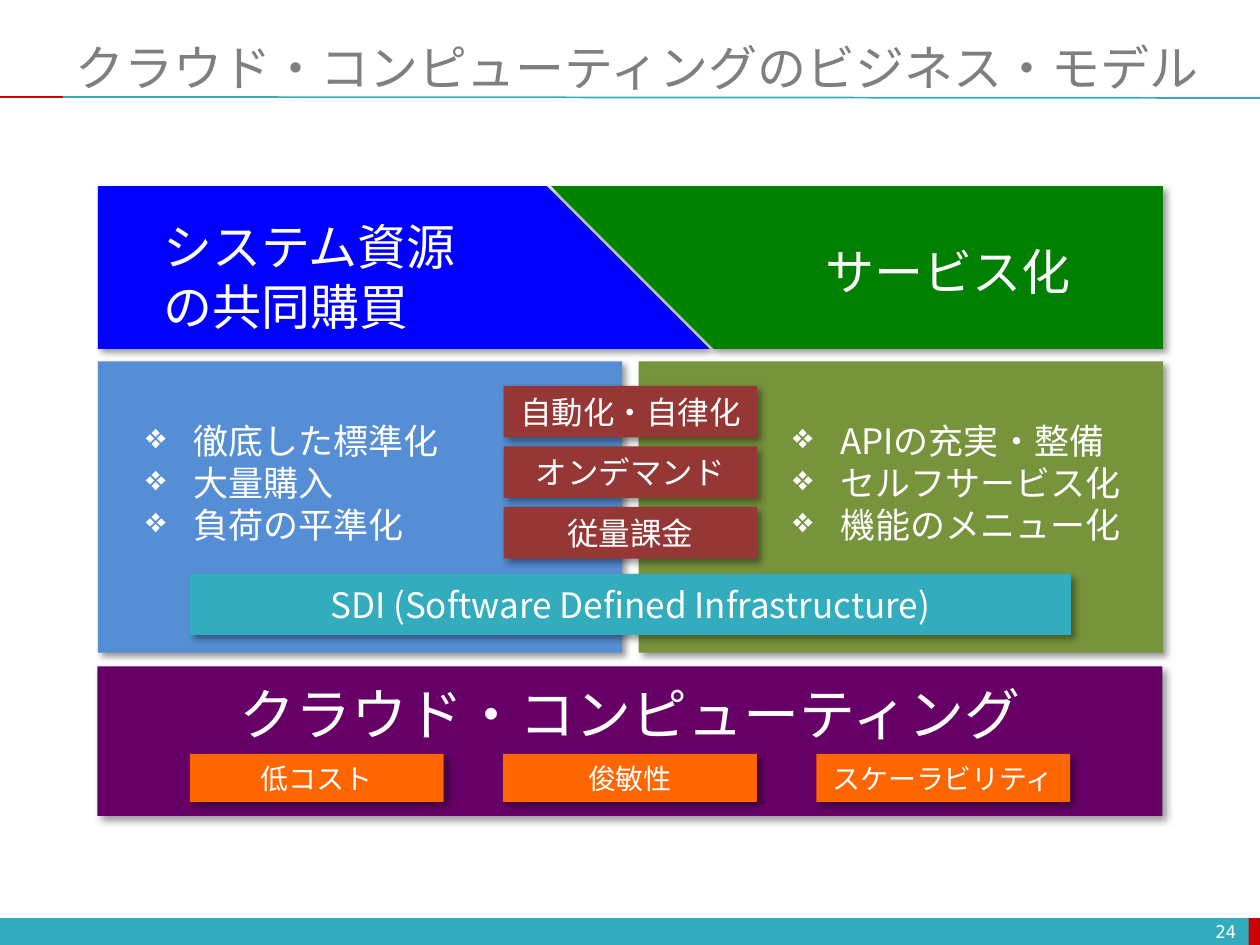
from lxml import etree
from pptx import Presentation
from pptx.dml.color import RGBColor
from pptx.enum import shapes, text
from pptx.oxml.ns import qn
from pptx.util import Pt

NOTO = "Noto Sans CJK JP"
WHITE = "FFFFFF"
LEFT, CENTER, RIGHT = text.PP_ALIGN.LEFT, text.PP_ALIGN.CENTER, text.PP_ALIGN.RIGHT
TOP, MIDDLE = text.MSO_ANCHOR.TOP, text.MSO_ANCHOR.MIDDLE


def rgb(value):
    """Turn a hex string into a colour."""
    return RGBColor.from_string(value)


def paint(sp, color, shadow=True):
    """Fill a shape, remove its outline and set its shadow."""
    sp.fill.solid()
    sp.fill.fore_color.rgb = rgb(color)
    sp.line.fill.background()
    sp.shadow.inherit = False
    if shadow:
        effects = sp._element.spPr.find(qn("a:effectLst"))
        outer = etree.SubElement(effects, qn("a:outerShdw"), blurRad=str(Pt(4)),
                                 dist=str(Pt(3)), dir="2700000", algn="tl", rotWithShape="0")
        shade = etree.SubElement(outer, qn("a:srgbClr"), val="000000")
        etree.SubElement(shade, qn("a:alpha"), val="40000")


def write(sp, lines, size, align=CENTER, anchor=MIDDLE, font=NOTO, color=WHITE,
          inset=3.6, bullet=None):
    """Write paragraphs into a shape and format them."""
    tf = sp.text_frame
    tf.text = lines
    tf.word_wrap = True
    tf.auto_size = text.MSO_AUTO_SIZE.NONE
    tf.vertical_anchor = anchor
    tf.margin_top = Pt(inset)
    tf.margin_bottom = Pt(3.6)
    for p in tf.paragraphs:
        p.alignment = align
        if anchor == TOP:
            p.line_spacing = Pt(round(size * 1.2))
        if bullet:
            pPr = p._p.get_or_add_pPr()
            pPr.set("marL", str(Pt(27)))
            pPr.set("indent", str(Pt(-27)))
            etree.SubElement(pPr, qn("a:buChar"), char=bullet)
        for r in p.runs:
            r.font.size = Pt(size)
            r.font.name = font
            r.font.color.rgb = rgb(color)
            etree.SubElement(r._r.get_or_add_rPr(), qn("a:ea"), typeface=font)


def add_rect(s, x, y, w, h, color, shadow=True):
    """Add a plain filled rectangle."""
    sp = s.shapes.add_shape(shapes.MSO_SHAPE.RECTANGLE, Pt(x), Pt(y), Pt(w), Pt(h))
    paint(sp, color, shadow)
    return sp


def add_text(s, x, y, w, h, lines, size, **style):
    """Add a formatted text box."""
    write(s.shapes.add_textbox(Pt(x), Pt(y), Pt(w), Pt(h)), lines, size, **style)


def add_rule(s, x1, y1, x2, y2, color):
    """Add a thin rule without a shadow."""
    line = s.shapes.add_connector(shapes.MSO_CONNECTOR.STRAIGHT, Pt(x1), Pt(y1), Pt(x2), Pt(y2))
    line.line.color.rgb = rgb(color)
    line.line.width = Pt(1)
    etree.SubElement(line._element.spPr, qn("a:effectLst"))


def add_polygon(s, points, color):
    """Add a closed outline through the given points."""
    corners = [(Pt(x), Pt(y)) for x, y in points]
    builder = s.shapes.build_freeform(*corners[0], scale=1.0)
    builder.add_line_segments(corners[1:], close=True)
    paint(builder.convert_to_shape(), color)


def add_frame(s, title, number, w, h):
    """Place the title, its rules and the footer bar."""
    add_rect(s, 0, h - 15.4, w, 15.6, "33ACBD", shadow=False)
    add_rect(s, w - 6.5, h - 15.4, 6.5, 15.6, "CC0000", shadow=False)
    add_rule(s, 36, 55.4, w, 56, "33ACBD")
    add_rule(s, 0, 55.4, 36, 55.4, "CC0000")
    sp = s.shapes.title
    sp.left, sp.top, sp.width, sp.height = Pt(36), Pt(21.6), Pt(w - 36), Pt(33)
    write(sp, title, 28, align=LEFT, font="Calibri", color="7F7F7F")
    add_text(s, w - 174, h - 16.6, 167.5, 17.3, number, 10, align=RIGHT,
             font="DejaVu Sans Mono")


def add_header(s, x, y, w, h):
    """Place the two slanted headings side by side."""
    slant, right, bottom = 93, x + w, y + h
    left_foot, right_foot = x + 349.5, x + 352
    add_polygon(s, [(x, y), (x, bottom), (left_foot, bottom), (left_foot - slant, y)], "0000FF")
    add_text(s, x + 30.4, y + 12.2, 200, 75, "システム資源\nの共同購買", 28,
             align=LEFT, anchor=TOP, inset=5)
    add_polygon(s, [(right, bottom), (right, y), (right_foot - slant, y), (right_foot, bottom)],
                "008000")
    add_text(s, x + 407.7, y + 26, 156, 41, "サービス化", 28, anchor=TOP, inset=5)


def add_panels(s, x, y, w, h):
    """Place the two bulleted panels with the shared boxes across them."""
    panel_w = 299.5
    panels = [
        (x, 20.3, "558ED5", "徹底した標準化\n大量購入\n負荷の平準化"),
        (x + w - panel_w, 81, "77933C", "APIの充実・整備\nセルフサービス化\n機能のメニュー化"),
    ]
    for left, offset, color, items in panels:
        add_rect(s, left, y, panel_w, h, color)
        add_text(s, left + offset, y + 28.2, 216, 80, items, 20,
                 align=LEFT, anchor=TOP, inset=5, bullet="❖")
    for i, label in enumerate(["自動化・自律化", "オンデマンド", "従量課金"]):
        box = add_rect(s, x + (w - 145) / 2, y + 14 + i * 34.6, 145, 29.5, "953735")
        write(box, label, 18)
    write(add_rect(s, x + 52.5, y + 121.5, w - 105, 34.8, "33ACBD"),
          "SDI (Software Defined Infrastructure)", 20)


def add_base(s, x, y, w, h):
    """Place the foundation block with its three benefits."""
    write(add_rect(s, x, y, w, h, "660066"), "クラウド・コンピューティング", 32,
          anchor=TOP, inset=8)
    for i, label in enumerate(["低コスト", "俊敏性", "スケーラビリティ"]):
        write(add_rect(s, x + 52.8 + i * 179, y + 50, 145, 27.5, "FF6600"), label, 16)


def main():
    """Build and save the slide."""
    w, h = 720, 540
    prs = Presentation()
    prs.slide_width, prs.slide_height = Pt(w), Pt(h)
    s = prs.slides.add_slide(prs.slide_layouts[5])
    add_frame(s, "クラウド・コンピューティングのビジネス・モデル", "24", w, h)
    add_header(s, 56, 106.4, 608.5, 93)
    add_panels(s, 56, 206.5, 608.5, 166.5)
    add_base(s, 55.7, 380.8, 608.5, 85.5)
    prs.save("out.pptx")


if __name__ == "__main__":
    main()
